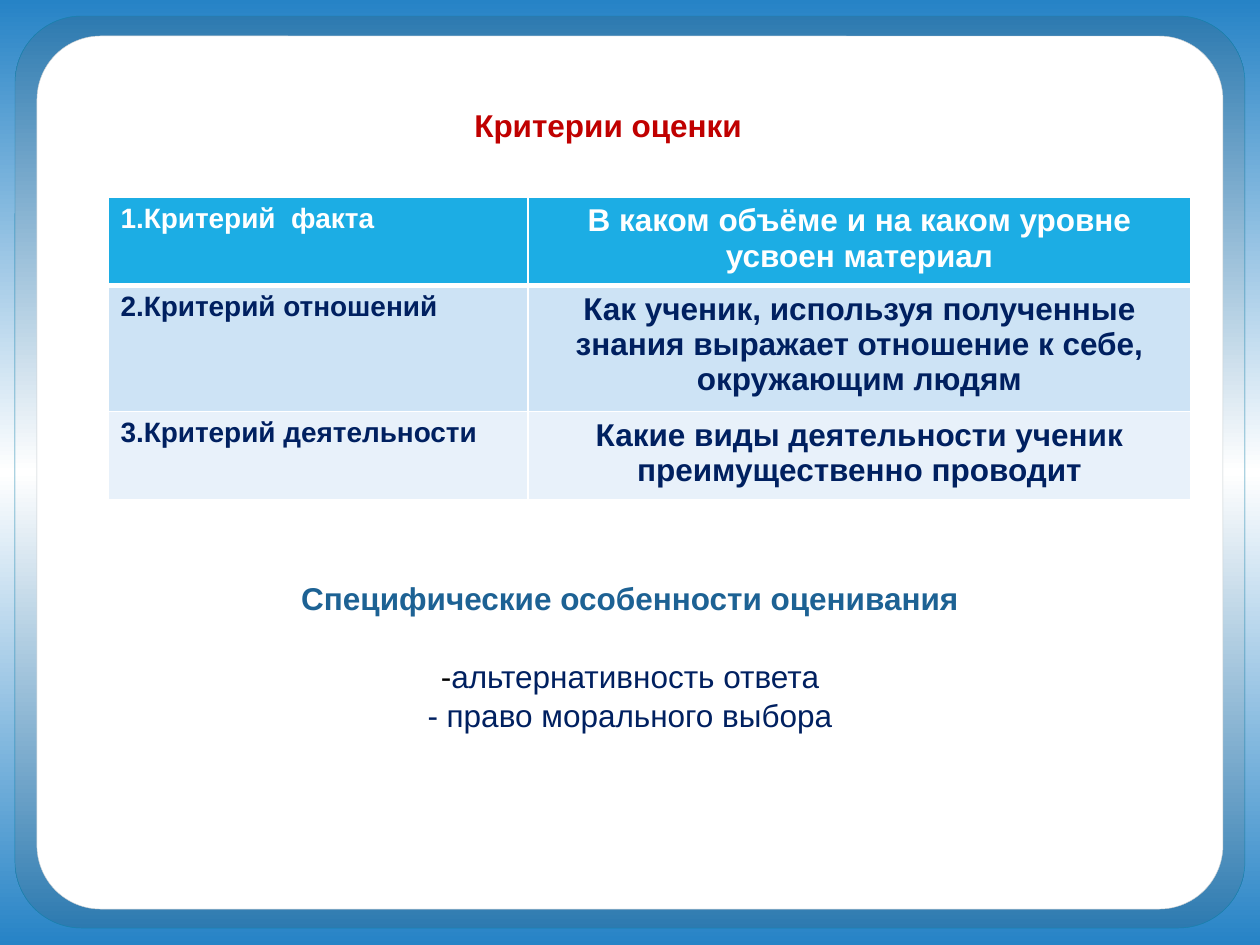
from dataclasses import dataclass

from lxml import etree
from pptx import Presentation
from pptx.dml.color import RGBColor
from pptx.enum import shapes, text
from pptx.oxml.ns import qn
from pptx import util as u

PX_PER_INCH = 126
FONT = "Arial"
NAVY = "002060"
WHITE = "FFFFFF"
CENTER = text.PP_ALIGN.CENTER
LEFT = text.PP_ALIGN.LEFT


@dataclass(frozen=True)
class Area:
    left: int
    top: int
    width: int
    height: int


@dataclass(frozen=True)
class Span:
    words: str
    color: str
    bold: bool = False
    size: int = 18


@dataclass(frozen=True)
class Line:
    spans: tuple[Span, ...]
    align: text.PP_ALIGN = CENTER
    before: int = 0


@dataclass(frozen=True)
class Criterion:
    name: str
    question: str
    height: int
    fill: str
    color: str
    rule: int = 1


CRITERIA = (
    Criterion("1.Критерий  факта", "В каком объёме и на каком уровне усвоен материал",
              88, "1CADE4", WHITE, 3),
    Criterion("2.Критерий отношений",
              "Как ученик, используя полученные знания выражает отношение к себе, окружающим людям",
              126, "CDE3F5", NAVY),
    Criterion("3.Критерий деятельности", "Какие виды деятельности ученик преимущественно проводит",
              88, "E8F1FA", NAVY),
)
COLUMNS = (420, 663)
TITLE = (Line((Span("Критерии оценки", "C00000", True),), LEFT),)
FEATURES = (
    Line((Span("Специфические особенности оценивания", "1D6294", True),)),
    Line((Span("-", "000000"), Span("альтернативность ответа", NAVY)), before=38),
    Line((Span("- право морального выбора", NAVY),)),
)


def px(length: int) -> int:
    return round(length * u.Inches(1) / PX_PER_INCH)


def rgb(color: str) -> RGBColor:
    return RGBColor.from_string(color)


def place(area: Area) -> tuple[int, int, int, int]:
    return px(area.left), px(area.top), px(area.width), px(area.height)


def add_gradient(fill, element, edge: str) -> None:
    fill.gradient()
    fill.gradient_angle = 90
    stops = element.find(".//" + qn("a:gsLst"))
    for stop in list(stops):
        stops.remove(stop)
    for position, color in ((0, edge), (50000, WHITE), (100000, edge)):
        stop = etree.SubElement(stops, qn("a:gs"), pos=str(position))
        etree.SubElement(stop, qn("a:srgbClr"), val=color)


def add_panel(page, area: Area, line: str):
    panel = page.shapes.add_shape(shapes.MSO_SHAPE.ROUNDED_RECTANGLE, *place(area))
    panel.adjustments[0] = 0.073
    panel.shadow.inherit = False
    panel.line.color.rgb = rgb(line)
    panel.line.width = u.Pt(0.25)
    return panel


def write(frame, lines: tuple[Line, ...], spacing: float = 1.0) -> None:
    for index, line in enumerate(lines):
        para = frame.add_paragraph() if index else frame.paragraphs[0]
        para.alignment = line.align
        para.line_spacing = spacing
        if line.before:
            para.space_before = px(line.before)
        for span in line.spans:
            run = para.add_run()
            run.text = span.words
            run.font.name = FONT
            run.font.size = u.Pt(span.size)
            run.font.bold = span.bold
            run.font.color.rgb = rgb(span.color)


def add_text(page, area: Area, lines: tuple[Line, ...]) -> None:
    box = page.shapes.add_textbox(*place(area))
    box.text_frame.word_wrap = True
    write(box.text_frame, lines, 1.05)


def add_borders(cell, top: int, bottom: int) -> None:
    properties = cell._tc.get_or_add_tcPr()
    sides = (("lnL", 1), ("lnR", 1), ("lnT", top), ("lnB", bottom))
    for index, (side, width) in enumerate(sides):
        border = etree.Element(qn("a:" + side), w=str(u.Pt(width)))
        fill = etree.SubElement(border, qn("a:solidFill"))
        etree.SubElement(fill, qn("a:srgbClr"), val=WHITE)
        properties.insert(index, border)


def add_criteria(page, left: int, top: int) -> None:
    area = Area(left, top, sum(COLUMNS), sum(row.height for row in CRITERIA))
    table = page.shapes.add_table(len(CRITERIA), len(COLUMNS), *place(area)).table
    for column, width in zip(table.columns, COLUMNS):
        column.width = px(width)
    rule_above = 1
    for index, criterion in enumerate(CRITERIA):
        table.rows[index].height = px(criterion.height)
        contents = ((criterion.name, 16, LEFT), (criterion.question, 18, CENTER))
        for column, (words, size, align) in enumerate(contents):
            cell = table.cell(index, column)
            cell.fill.solid()
            cell.fill.fore_color.rgb = rgb(criterion.fill)
            add_borders(cell, rule_above, criterion.rule)
            write(cell.text_frame, (Line((Span(words, criterion.color, True, size),), align),))
        rule_above = criterion.rule


def main() -> None:
    deck = Presentation()
    deck.slide_width, deck.slide_height = px(1260), px(945)
    page = deck.slides.add_slide(deck.slide_layouts[6])
    add_gradient(page.background.fill, page.element, "2683C6")

    frame = add_panel(page, Area(15, 16, 1230, 912), "1482AC")
    add_gradient(frame.fill, frame.element, "2D7AB0")
    sheet = add_panel(page, Area(37, 36, 1186, 873), "C6CDD1")
    sheet.fill.solid()
    sheet.fill.fore_color.rgb = rgb(WHITE)

    add_text(page, Area(462, 98, 532, 50), TITLE)
    add_criteria(page, 108, 197)
    add_text(page, Area(39, 571, 1182, 394), FEATURES)
    deck.save("out.pptx")


if __name__ == "__main__":
    main()
